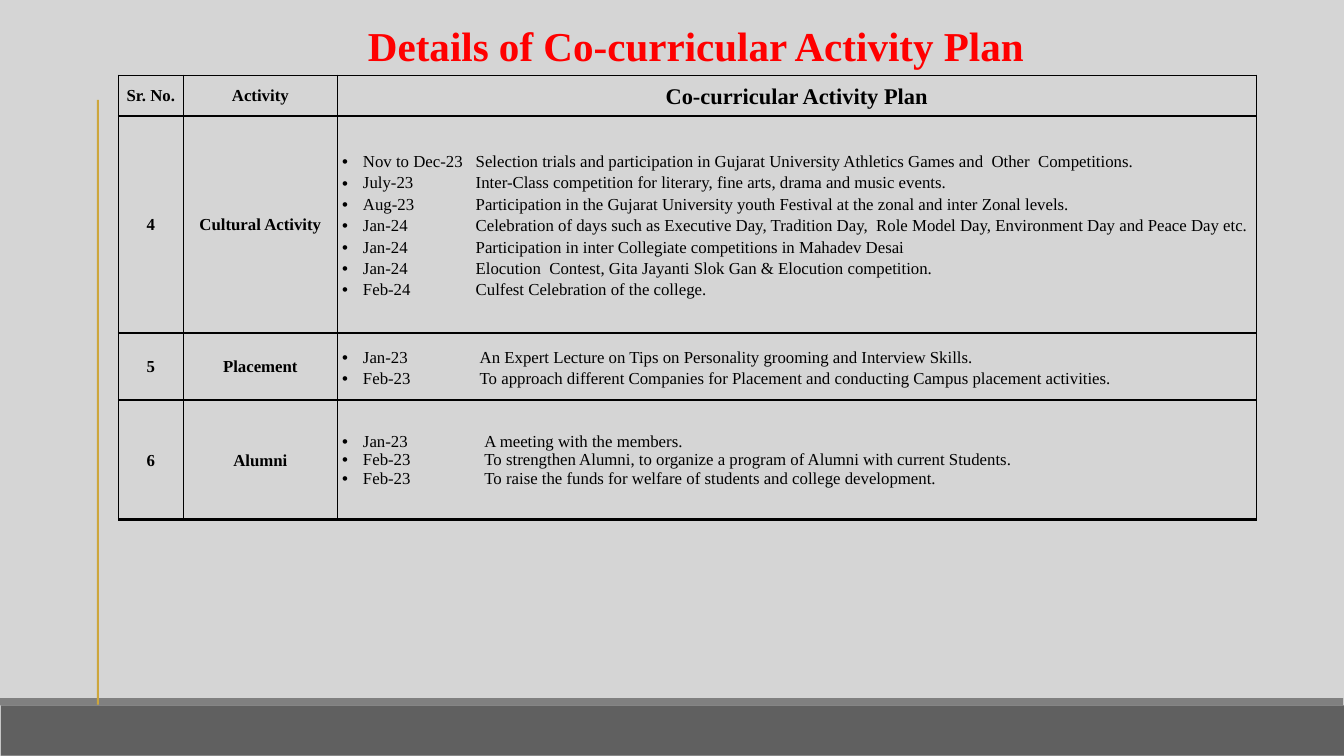
from dataclasses import dataclass

from lxml.etree import SubElement
from pptx import Presentation
from pptx.dml.color import RGBColor
from pptx.enum.shapes import MSO_SHAPE as Preset
from pptx.enum.text import MSO_ANCHOR as Anchor, PP_ALIGN as Align
from pptx.oxml import parse_xml
from pptx.oxml.ns import nsdecls, qn
from pptx.slide import Slide
from pptx.util import Cm, Pt

HEADINGS = ["Sr. No.", "Activity", "Co-curricular Activity Plan"]
# Number, activity, line spacing, tab stop of the descriptions in cm, plan
ACTIVITIES = [
    ("4", "Cultural Activity", 1.15, 5.05, [
        ("Nov to Dec-23", "Selection trials and participation in Gujarat University "
                          "Athletics Games and  Other  Competitions."),
        ("July-23", "Inter-Class competition for literary, fine arts, drama and music events."),
        ("Aug-23", "Participation in the Gujarat University youth Festival at the zonal "
                   "and inter Zonal levels."),
        ("Jan-24", "Celebration of days such as Executive Day, Tradition Day,  Role Model Day, "
                   "Environment Day and Peace Day etc."),
        ("Jan-24", "Participation in inter Collegiate competitions in Mahadev Desai"),
        ("Jan-24", "Elocution  Contest, Gita Jayanti Slok Gan & Elocution competition."),
        ("Feb-24", "Culfest Celebration of the college."),
    ]),
    ("5", "Placement", 1.15, 5.2, [
        ("Jan-23", "An Expert Lecture on Tips on Personality grooming and Interview Skills."),
        ("Feb-23", "To approach different Companies for Placement and conducting "
                   "Campus placement activities."),
    ]),
    ("6", "Alumni", 1.0, 5.38, [
        ("Jan-23", "A meeting with the members."),
        ("Feb-23", "To strengthen Alumni, to organize a program of Alumni with current Students."),
        ("Feb-23", "To raise the funds for welfare of students and college development."),
    ]),
]
COLUMN_WIDTHS = [2.46, 5.82, 34.72]
ROW_HEIGHTS = [1.55, 8.2, 2.54, 4.52]


def color(hex_value):
    return RGBColor.from_string(hex_value)


@dataclass
class SlideBuilder:
    slide: Slide
    font: str = "Times New Roman"
    ink: str = "000000"
    paper: str = "D5D5D5"

    def background(self):
        fill = self.slide.background.fill
        fill.solid()
        fill.fore_color.rgb = color(self.paper)

    def bar(self, left, top, width, height, fill):
        shape = self.slide.shapes.add_shape(
            Preset.RECTANGLE, Cm(left), Cm(top), Cm(width), Cm(height))
        shape.shadow.inherit = False
        shape.fill.solid()
        shape.fill.fore_color.rgb = color(fill)
        shape.line.fill.background()

    def run(self, paragraph, text, size=18, bold=False, ink=None):
        run = paragraph.add_run()
        run.text = text
        run.font.name = self.font
        run.font.size = Pt(size)
        run.font.bold = bold
        run.font.color.rgb = color(ink or self.ink)

    def title(self, text, left, top, width, height):
        box = self.slide.shapes.add_textbox(Cm(left), Cm(top), Cm(width), Cm(height))
        frame = box.text_frame
        frame.word_wrap = True
        frame.margin_top = Cm(0.25)
        frame.margin_right = Cm(1.09)
        paragraph = frame.paragraphs[0]
        paragraph.alignment = Align.CENTER
        self.run(paragraph, text, 44, True, "FF0000")

    def table(self, left, top, widths, heights):
        frame = self.slide.shapes.add_table(
            len(heights), len(widths), Cm(left), Cm(top), Cm(sum(widths)), Cm(sum(heights)))
        table = frame.table
        table.first_row = table.horz_banding = False
        for column, width in zip(table.columns, widths):
            column.width = Cm(width)
        for index, (row, height) in enumerate(zip(table.rows, heights)):
            row.height = Cm(height)
            for cell in row.cells:
                self.cell_style(cell, top_line=3 if index else 1)
        return table

    def cell_style(self, cell, top_line):
        cell.vertical_anchor = Anchor.MIDDLE
        cell.margin_left = cell.margin_right = Cm(0.18)
        cell.margin_top = cell.margin_bottom = 0
        cell.fill.solid()
        cell.fill.fore_color.rgb = color(self.paper)
        properties = cell._tc.get_or_add_tcPr()
        borders = [("lnL", 1), ("lnR", 1), ("lnT", top_line), ("lnB", 3)]
        for position, (side, points) in enumerate(borders):
            properties.insert(position, parse_xml(
                f'<a:{side} {nsdecls("a")} w="{Pt(points)}"><a:solidFill>'
                f'<a:srgbClr val="{self.ink}"/></a:solidFill></a:{side}>'))

    def label(self, cell, text, size=18):
        paragraph = cell.text_frame.paragraphs[0]
        paragraph.alignment = Align.CENTER
        paragraph.line_spacing = 1.07
        self.run(paragraph, text, size, bold=True)

    def plan(self, cell, entries, spacing, tab):
        """Fill a cell with bulleted dates and descriptions aligned at a tab stop."""
        frame = cell.text_frame
        for index, (date, description) in enumerate(entries):
            paragraph = frame.add_paragraph() if index else frame.paragraphs[0]
            paragraph.line_spacing = spacing
            properties = paragraph._p.get_or_add_pPr()
            properties.set("marL", str(Cm(0.79)))
            properties.set("indent", str(-Cm(0.79)))
            SubElement(properties, qn("a:buFont"), typeface="Arial")
            SubElement(properties, qn("a:buChar"), char="•")
            tabs = SubElement(properties, qn("a:tabLst"))
            SubElement(tabs, qn("a:tab"), pos=str(Cm(tab)), algn="l")
            self.run(paragraph, f"{date}\t{description}")


def main():
    presentation = Presentation()
    presentation.slide_width = Cm(50.8)
    presentation.slide_height = Cm(28.58)
    builder = SlideBuilder(presentation.slides.add_slide(presentation.slide_layouts[6]))

    builder.background()
    builder.bar(0.03, 26.67, 50.77, 1.9, "606060")
    builder.bar(0, 26.39, 50.77, 0.28, "808080")
    builder.bar(3.66, 3.78, 0.08, 22.86, "CDA63C")
    builder.title("Details of Co-curricular Activity Plan", 5.05, 0.53, 43.38, 2.31)

    table = builder.table(4.47, 2.84, COLUMN_WIDTHS, ROW_HEIGHTS)
    for column, (heading, size) in enumerate(zip(HEADINGS, [18, 18, 24])):
        builder.label(table.cell(0, column), heading, size)
    for row, (number, activity, spacing, tab, entries) in enumerate(ACTIVITIES, start=1):
        builder.label(table.cell(row, 0), number)
        builder.label(table.cell(row, 1), activity)
        builder.plan(table.cell(row, 2), entries, spacing, tab)

    presentation.save("out.pptx")


if __name__ == "__main__":
    main()
